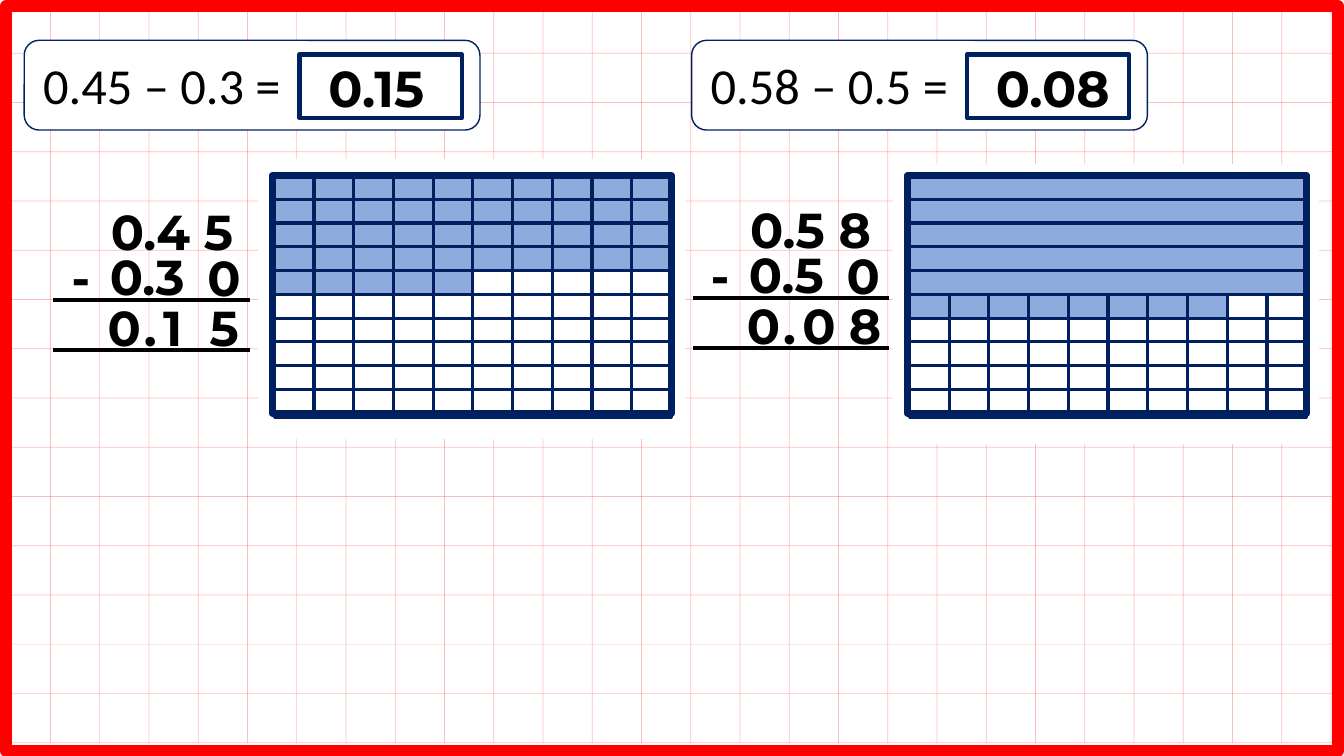
from dataclasses import dataclass
from typing import NamedTuple, Optional

from lxml.etree import SubElement
from pptx import Presentation
from pptx.dml.color import RGBColor
from pptx.enum.shapes import MSO_CONNECTOR as Connector
from pptx.enum.shapes import MSO_SHAPE as Preset
from pptx.enum.text import MSO_AUTO_SIZE as AutoSize
from pptx.oxml.ns import qn
from pptx.slide import Slide
from pptx.util import Inches, Pt

RED = RGBColor(0xFF, 0x00, 0x00)
WHITE = RGBColor(0xFF, 0xFF, 0xFF)
BLACK = RGBColor(0x00, 0x00, 0x00)
NAVY = RGBColor(0x00, 0x20, 0x60)
SHADE = RGBColor(0x8F, 0xAA, 0xDC)

EQUATION_FONT = {"name": "Calibri", "size": Pt(36), "bold": False}
ANSWER_FONT = {"name": "Montserrat", "size": Pt(36), "bold": True}
DIGIT_FONT = {"name": "Montserrat", "size": Pt(35), "bold": True}

PAPER_STEP = 0.4885
PARTS = 10
CELL_WIDTH = 0.394
CELL_HEIGHT = 0.236


class Area(NamedTuple):
    left: float
    top: float
    width: float
    height: float


class Stroke(NamedTuple):
    color: RGBColor
    points: float


class Piece(NamedTuple):
    text: str
    left: float
    top: float
    width: float = 0.57


class Band(NamedTuple):
    top: float
    height: float


@dataclass
class Equation:
    left: float
    question: str
    answer: str


@dataclass
class ColumnSum:
    left: float
    top: float
    first: str
    second: str
    digits: tuple[str, str, str]


@dataclass
class Model:
    left: float
    top: float
    shades: list[Area]
    bands: list[Band]


PANELS = [Area(8.86, 1.63, 4.22, 2.77), Area(2.57, 1.58, 4.22, 2.77)]
EQUATIONS = [
    Equation(0.24, "0.45 – 0.3 =", "0.15"),
    Equation(6.86, "0.58 – 0.5 =", "0.08"),
]
SUMS = [
    ColumnSum(0.53, 1.95, "0.4 5", "0.3", ("0", "1", "5")),
    ColumnSum(6.87, 1.93, "0.5 8", "0.5", ("0", "0", "8")),
]
MODELS = [
    Model(
        2.68, 1.74,
        [Area(2.72, 1.76, 3.96, 0.7), Area(2.71, 2.69, 1.98, 0.22), Area(2.69, 2.45, 3.96, 0.24)],
        [Band(0.94, 1.46), Band(0, 0.94)],
    ),
    Model(
        8.98, 1.74,
        [Area(9.02, 1.76, 3.96, 1.15), Area(9, 2.93, 3.17, 0.22)],
        [Band(1.18, 1.22)],
    ),
]


def draw_box(page: Slide, area: Area, fill: Optional[RGBColor] = None,
             stroke: Optional[Stroke] = None, preset: Preset = Preset.RECTANGLE) -> None:
    box = page.shapes.add_shape(preset, *map(Inches, area))
    box.shadow.inherit = False
    if fill is None:
        box.fill.background()
    else:
        box.fill.solid()
        box.fill.fore_color.rgb = fill
    if stroke is None:
        box.line.fill.background()
    else:
        box.line.color.rgb = stroke.color
        box.line.width = Pt(stroke.points)


def draw_line(page: Slide, start: tuple[float, float], end: tuple[float, float],
              stroke: Stroke, opacity: int = 100) -> None:
    line = page.shapes.add_connector(Connector.STRAIGHT, *map(Inches, start + end))
    line.line.color.rgb = stroke.color
    line.line.width = Pt(stroke.points)
    properties = line._element.spPr
    if opacity < 100:
        color = properties.find(".//" + qn("a:srgbClr"))
        SubElement(color, qn("a:alpha"), val=str(opacity * 1000))
    SubElement(properties, qn("a:effectLst"))


def draw_text(page: Slide, area: Area, text: str, font: dict, wrap: bool = True) -> None:
    frame = page.shapes.add_textbox(*map(Inches, area)).text_frame
    frame.word_wrap = wrap
    frame.auto_size = AutoSize.SHAPE_TO_FIT_TEXT
    para = frame.paragraphs[0]
    span = para.add_run()
    span.text = text
    for name, value in font.items():
        setattr(span.font, name, value)
    span.font.color.rgb = BLACK


def draw_paper(page: Slide) -> None:
    thin = Stroke(RED, 0.5)
    for column in range(27):
        x = 0.5 + column * PAPER_STEP
        draw_line(page, (x, -0.13), (x, 7.37), thin, 25)
    for row in range(16):
        y = 0.04 + row * PAPER_STEP
        draw_line(page, (13.33, y), (0, y), thin, 25)
    for panel in PANELS:
        draw_box(page, panel, WHITE, Stroke(WHITE, 1))
    draw_box(page, Area(0.06, 0.06, 13.21, 7.39), stroke=Stroke(RED, 8.25))


def draw_equation(page: Slide, equation: Equation) -> None:
    left = equation.left
    draw_box(page, Area(left, 0.4, 4.52, 0.89), WHITE, Stroke(NAVY, 1), Preset.ROUNDED_RECTANGLE)
    draw_text(page, Area(left + 0.09, 0.49, 2.69, 0.71), equation.question, EQUATION_FONT, False)
    draw_box(page, Area(left + 2.73, 0.54, 1.61, 0.63), stroke=Stroke(NAVY, 3))
    draw_text(page, Area(left + 2.92, 0.52, 1.9, 0.71), equation.answer, ANSWER_FONT)


def draw_sum(page: Slide, column_sum: ColumnSum) -> None:
    left, top = column_sum.left, column_sum.top
    ones, tenths, hundredths = column_sum.digits
    pieces = [
        Piece(column_sum.first, 0.47, 0, 2.01),
        Piece(column_sum.second, 0.46, 0.45, 1.09),
        Piece("-", 0.08, 0.46),
        Piece("0", 1.43, 0.46),
        Piece(".", 0.8, 0.95),
        Piece(hundredths, 1.45, 0.95),
        Piece(tenths, 0.99, 0.95),
        Piece(ones, 0.44, 0.95),
    ]
    for piece in pieces:
        area = Area(left + piece.left, top + piece.top, piece.width, 0.69)
        draw_text(page, area, piece.text, DIGIT_FONT)
    for drop in (1.03, 1.52):
        draw_line(page, (left, top + drop), (left + 1.95, top + drop), Stroke(BLACK, 3))


def draw_model(page: Slide, model: Model) -> None:
    left, top = model.left, model.top
    width, height = PARTS * CELL_WIDTH + 0.02, PARTS * CELL_HEIGHT
    thin = Stroke(NAVY, 2.25)
    for shade in model.shades:
        draw_box(page, shade, SHADE)
    for row in range(PARTS):
        draw_box(page, Area(left, top + row * CELL_HEIGHT, width, CELL_HEIGHT), stroke=thin)
    draw_box(page, Area(left + 0.02, top, width, height), stroke=Stroke(NAVY, 5))
    for band in model.bands:
        for column in range(PARTS):
            x = left + 0.04 + column * CELL_WIDTH
            draw_box(page, Area(x, top + band.top, CELL_WIDTH, band.height), stroke=thin)


def main() -> None:
    deck = Presentation()
    deck.slide_width, deck.slide_height = Inches(13.33), Inches(7.5)
    page = deck.slides.add_slide(deck.slide_layouts[6])
    draw_paper(page)
    for equation in EQUATIONS:
        draw_equation(page, equation)
    for column_sum in SUMS:
        draw_sum(page, column_sum)
    for model in MODELS:
        draw_model(page, model)
    deck.save("out.pptx")


if __name__ == "__main__":
    main()
